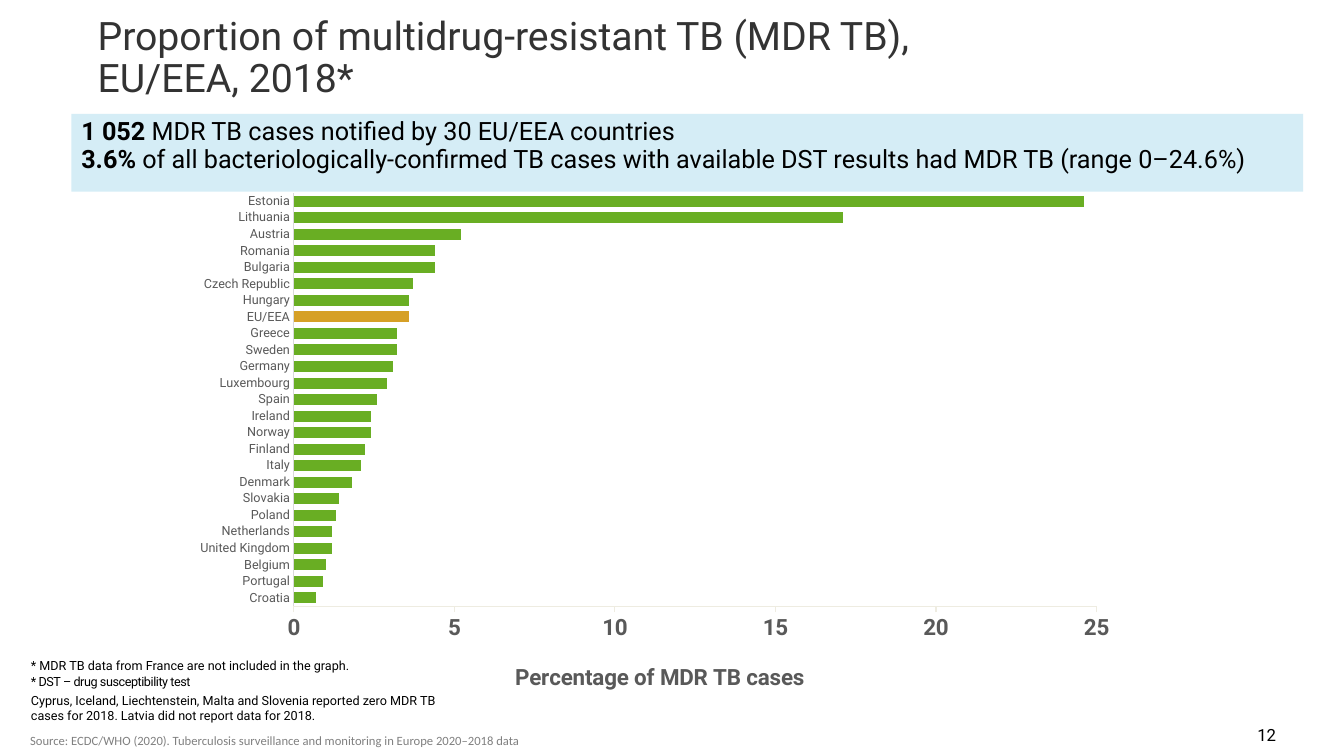
from dataclasses import dataclass

from lxml import etree
from pptx import Presentation
from pptx import util as u
from pptx.chart.data import CategoryChartData
from pptx.dml.color import RGBColor
from pptx.enum import chart as ch, shapes, text
from pptx.oxml import parse_xml
from pptx.oxml.ns import nsdecls, qn

BLACK = RGBColor(0x00, 0x00, 0x00)
TITLE_GREY = RGBColor(0x33, 0x33, 0x33)
AXIS_GREY = RGBColor(0x59, 0x59, 0x59)
SOURCE_GREY = RGBColor(0x80, 0x80, 0x80)
CATEGORY_LINE = RGBColor(0xD9, 0xD9, 0xD9)
VALUE_LINE = RGBColor(0xEE, 0xEC, 0xE1)
PALE_BLUE = RGBColor(0xAC, 0xDD, 0xEF)
GREEN = RGBColor(0x69, 0xAE, 0x23)
GOLD = RGBColor(0xD6, 0xA0, 0x26)

SANS = "Roboto"
AVERAGE = "EU/EEA"


@dataclass
class Run:
    text: str
    bold: bool = False
    tracking: float = 0


@dataclass
class Para:
    runs: list[Run]
    before: float = 0


@dataclass
class Block:
    box: tuple[float, float, float, float]  # left, top, width, height in cm
    paras: list[Para]
    size: float
    color: RGBColor = BLACK
    font: str = SANS
    line: float = 1.0
    align: text.PP_ALIGN = text.PP_ALIGN.LEFT
    anchor: text.MSO_ANCHOR = text.MSO_ANCHOR.TOP
    margins: tuple[float, float] = (0.25, 0.13)  # sides, top and bottom
    fill: RGBColor | None = None


BLOCKS = [
    # Title
    Block((2.46, 0.41, 21.79, 2.29),
          [Para([Run("Proportion of multidrug-resistant TB (MDR TB), EU/EEA, 2018*")])],
          28, TITLE_GREY, line=0.9, margins=(0, 0)),
    # Slide number
    Block((25.3, 18.01, 7.11, 1.02), [Para([Run("12")])], 12,
          align=text.PP_ALIGN.RIGHT, anchor=text.MSO_ANCHOR.MIDDLE, margins=(0.25, 0.1)),
    # Source
    Block((0.76, 18.52, 14.45, 0.51),
          [Para([Run("Source: ECDC/WHO (2020). Tuberculosis surveillance and "
                     "monitoring in Europe 2020–2018 data")])],
          9, SOURCE_GREY, "Calibri", line=0.9, margins=(0, 0)),
    # Footnotes
    Block((0.53, 16.46, 10.69, 1.9),
          [Para([Run("* MDR TB data from France are not included in the graph.")]),
           Para([Run("* DST – drug susceptibility test", tracking=-0.3)]),
           Para([Run("Cyprus, Iceland, Liechtenstein, Malta and Slovenia reported zero "
                     "MDR TB cases for 2018. Latvia did not report data for 2018.")], 2.7)],
          9),
    # Key figures banner
    Block((1.8, 2.87, 31.04, 1.96),
          [Para([Run("1 052 ", True), Run("MDR TB cases notified by 30 EU/EEA countries")]),
           Para([Run("3.6%", True),
                 Run(" of all bacteriologically-confirmed TB cases with available DST "
                     "results had MDR TB (range 0–24.6%)")])],
          18, line=0.9, fill=PALE_BLUE),
]

MDR_SHARE = {
    "Croatia": 0.7, "Portugal": 0.9, "Belgium": 1, "United Kingdom": 1.2,
    "Netherlands": 1.2, "Poland": 1.3, "Slovakia": 1.4, "Denmark": 1.8,
    "Italy": 2.1, "Finland": 2.2, "Norway": 2.4, "Ireland": 2.4, "Spain": 2.6,
    "Luxembourg": 2.9, "Germany": 3.1, "Sweden": 3.2, "Greece": 3.2,
    AVERAGE: 3.6, "Hungary": 3.6, "Czech Republic": 3.7, "Bulgaria": 4.4,
    "Romania": 4.4, "Austria": 5.2, "Lithuania": 17.1, "Estonia": 24.6,
}


def style_font(font, size: float, color: RGBColor, bold: bool = False, name: str = SANS) -> None:
    font.name, font.size, font.bold = name, u.Pt(size), bold
    font.color.rgb = color


def add_block(s, block: Block) -> None:
    box = [u.Cm(v) for v in block.box]
    if block.fill is None:
        sp = s.shapes.add_textbox(*box)
    else:
        sp = s.shapes.add_shape(shapes.MSO_SHAPE.SNIP_2_DIAG_RECTANGLE, *box)
        sp.adjustments[0] = sp.adjustments[1] = 0
        sp.shadow.inherit = False
        sp.line.fill.background()
        sp.fill.solid()
        sp.fill.fore_color.rgb = block.fill
        # Half-transparent fill
        clr = sp.fill._xPr.find(qn("a:solidFill"))[0]
        etree.SubElement(clr, qn("a:alpha")).set("val", "50000")
    tf = sp.text_frame
    tf.word_wrap = True
    tf.vertical_anchor = block.anchor
    tf.margin_left = tf.margin_right = u.Cm(block.margins[0])
    tf.margin_top = tf.margin_bottom = u.Cm(block.margins[1])
    for i, para in enumerate(block.paras):
        p = tf.add_paragraph() if i else tf.paragraphs[0]
        p.alignment, p.line_spacing = block.align, block.line
        p.space_before = u.Pt(para.before)
        for run in para.runs:
            r = p.add_run()
            r.text = run.text
            style_font(r.font, block.size, block.color, run.bold, block.font)
            if run.tracking:
                r._r.get_or_add_rPr().set("spc", str(round(run.tracking * 100)))


def manual_layout(inner: bool, **places: float):
    target = '<c:layoutTarget val="inner"/>' if inner else ""
    modes = "".join(f'<c:{k}Mode val="edge"/>' for k in "xy")
    values = "".join(f'<c:{k} val="{v}"/>' for k, v in places.items())
    return parse_xml(f'<c:layout {nsdecls("c")}><c:manualLayout>{target}{modes}{values}'
                     "</c:manualLayout></c:layout>")


def style_axis(axis, size: float, bold: bool, line: RGBColor, tick: ch.XL_TICK_MARK) -> None:
    axis.has_major_gridlines = False
    axis.major_tick_mark, axis.minor_tick_mark = tick, ch.XL_TICK_MARK.NONE
    style_font(axis.tick_labels.font, size, AXIS_GREY, bold)
    axis.format.line.color.rgb = line
    axis.format.line.width = u.Pt(0.75)


def add_share_chart(s) -> None:
    data = CategoryChartData()
    data.categories = list(MDR_SHARE)
    data.add_series("Series 1", list(MDR_SHARE.values()))
    chart = s.shapes.add_chart(ch.XL_CHART_TYPE.BAR_CLUSTERED, u.Cm(4.55), u.Cm(4.6),
                               u.Cm(23.8), u.Cm(13.18), data).chart
    chart.has_legend = chart.has_title = False
    style_font(chart.font, 10, BLACK)

    # Bars, with the average picked out
    plot = chart.plots[0]
    plot.gap_width, plot.overlap, plot.vary_by_categories = 50, 70, False
    series = plot.series[0]
    average = series.points[list(MDR_SHARE).index(AVERAGE)]
    for part, color in ((series, GREEN), (average, GOLD)):
        part.format.fill.solid()
        part.format.fill.fore_color.rgb = color

    # Axes
    style_axis(chart.category_axis, 9, False, CATEGORY_LINE, ch.XL_TICK_MARK.NONE)
    axis = chart.value_axis
    style_axis(axis, 16, True, VALUE_LINE, ch.XL_TICK_MARK.OUTSIDE)
    axis.minimum_scale, axis.maximum_scale, axis.major_unit = 0, 25, 5
    axis.tick_labels.number_format = "General"
    axis.tick_labels.number_format_is_linked = False
    r = axis.axis_title.text_frame.paragraphs[0].add_run()
    r.text = "Percentage of MDR TB cases"
    style_font(r.font, 16, AXIS_GREY, True)

    # Places of the plot area and the axis title
    title = axis.axis_title._element
    area = chart._chartSpace.chart.plotArea
    for parent in (title, area):
        for old in parent.findall(qn("c:layout")):
            parent.remove(old)
    title.find(qn("c:tx")).addnext(manual_layout(False, x=0.35, y=0.91))
    area.insert(0, manual_layout(True, x=0.12, y=0.02, w=0.85, h=0.79))


def main() -> None:
    prs = Presentation()
    prs.slide_width, prs.slide_height = u.Cm(33.87), u.Cm(19.05)
    s = prs.slides.add_slide(prs.slide_layouts[6])
    for block in BLOCKS:
        add_block(s, block)
    add_share_chart(s)
    prs.save("out.pptx")


if __name__ == "__main__":
    main()
